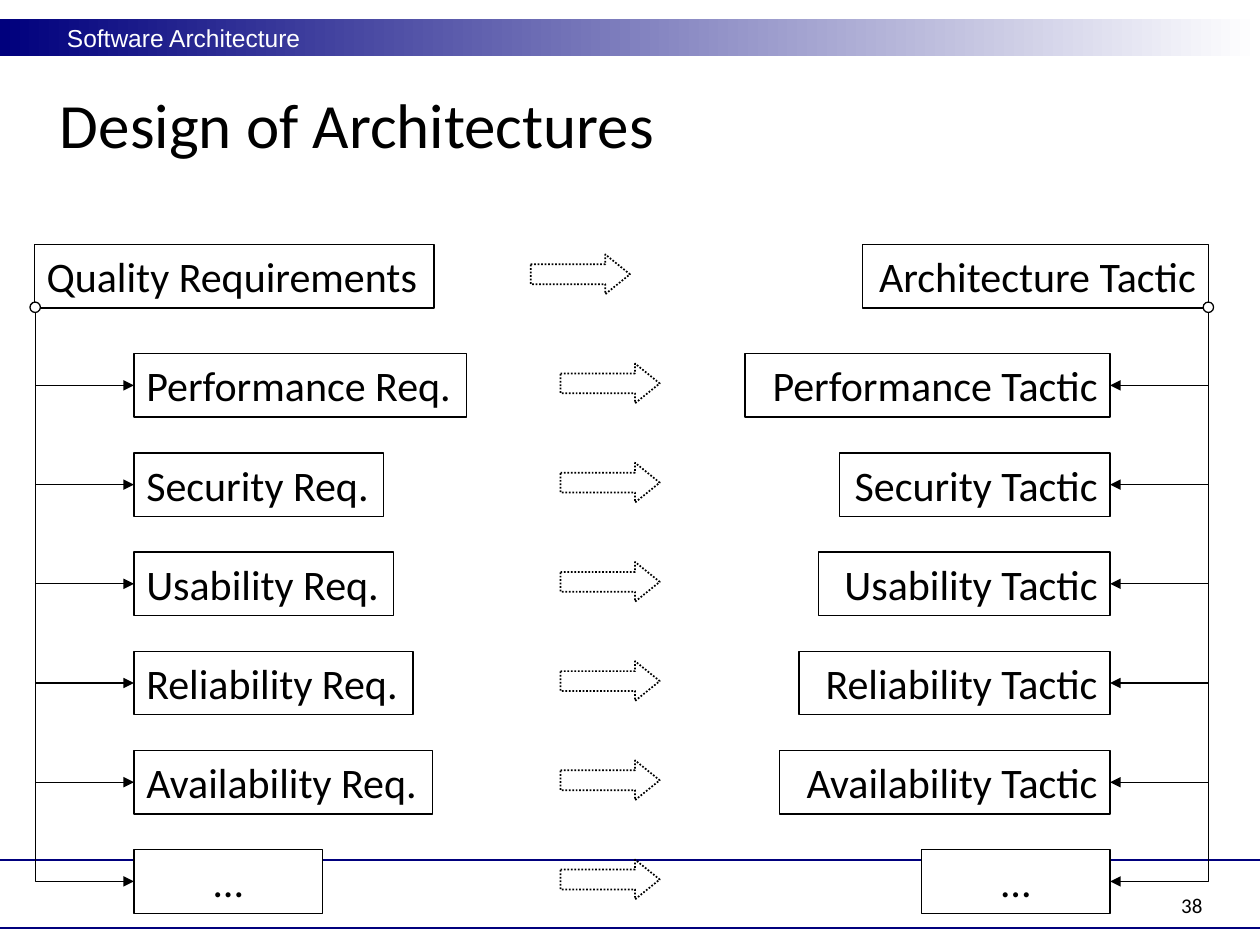
from dataclasses import dataclass

from lxml.etree import SubElement
from pptx import Presentation
from pptx.dml.color import RGBColor
from pptx.enum.dml import MSO_LINE
from pptx.enum.shapes import MSO_CONNECTOR, MSO_SHAPE
from pptx.enum.text import MSO_ANCHOR, PP_ALIGN
from pptx.oxml.ns import qn
from pptx.util import Cm, Pt


@dataclass(frozen=True)
class Theme:
    navy: RGBColor = RGBColor(0x00, 0x00, 0x7D)
    white: RGBColor = RGBColor(0xFF, 0xFF, 0xFF)
    black: RGBColor = RGBColor(0x00, 0x00, 0x00)
    banner_font: str = "Arial"
    body_font: str = "Calibri"
    title_size: int = 36
    box_size: int = 24
    banner_size: int = 14
    number_size: int = 12
    thin_line: float = 0.75
    dotted_line: float = 1
    rule_line: float = 1.25


THEME = Theme()

BANNER = "Software Architecture"
TITLE = "Design of Architectures"
PAGE_NUMBER = "38"

# Each column: header and items as (text, width in cm).
# "outer" is the edge of the header, "trunk" the line below it,
# "inner" the edge of the item boxes.
COLUMNS = [
    {
        "outer": 0.69, "trunk": 0.71, "inner": 2.7, "align": PP_ALIGN.LEFT,
        "header": ("Quality Requirements", 8.06),
        "items": [
            ("Performance Req.", 6.71), ("Security Req.", 5.03),
            ("Usability Req.", 5.23), ("Reliability Req.", 5.63),
            ("Availability Req.", 6.02), ("…", 3.81),
        ],
    },
    {
        "outer": 24.36, "trunk": 24.36, "inner": 22.38, "align": PP_ALIGN.RIGHT,
        "header": ("Architecture Tactic", 6.97),
        "items": [
            ("Performance Tactic", 7.36), ("Security Tactic", 5.46),
            ("Usability Tactic", 5.88), ("Reliability Tactic", 6.27),
            ("Availability Tactic", 6.66), ("…", 3.8),
        ],
    },
]

SLIDE_WIDTH, SLIDE_HEIGHT = 25.4, 19.05
HEADER_TOP, FIRST_ROW_TOP, ROW_PITCH, BOX_HEIGHT = 4.93, 7.13, 2, 1.28
DOT_TOP, DOT_SIZE = 6.09, 0.21
LONGEST_DROP = 7.47
ARROW_WIDTH, ARROW_HEIGHT = 2, 0.8
HEADER_ARROW_LEFT, ROW_ARROW_LEFT, ARROW_DROP = 10.7, 11.3, 0.2
ROW_COUNT = len(COLUMNS[0]["items"])
ROW_TOPS = [FIRST_ROW_TOP + ROW_PITCH * row for row in range(ROW_COUNT)]


def write(shape, text, size, color=THEME.black, font=THEME.body_font,
          align=PP_ALIGN.LEFT, anchor=MSO_ANCHOR.TOP):
    frame = shape.text_frame
    frame.word_wrap = True
    frame.vertical_anchor = anchor
    paragraph = frame.paragraphs[0]
    paragraph.alignment = align
    run = paragraph.add_run()
    run.text = text
    run.font.name = font
    run.font.size = Pt(size)
    run.font.color.rgb = color


def add_text(slide, left, top, width, height, *args, **options):
    box = slide.shapes.add_textbox(Cm(left), Cm(top), Cm(width), Cm(height))
    write(box, *args, **options)


def add_outlined(slide, kind, left, top, width, height):
    shape = slide.shapes.add_shape(kind, Cm(left), Cm(top), Cm(width), Cm(height))
    shape.shadow.inherit = False
    shape.fill.solid()
    shape.fill.fore_color.rgb = THEME.white
    shape.line.color.rgb = THEME.black
    shape.line.width = Pt(THEME.thin_line)
    return shape


def add_line(slide, start, end, color=THEME.black, width=THEME.thin_line,
             kind=MSO_CONNECTOR.STRAIGHT):
    line = slide.shapes.add_connector(
        kind, *(Cm(value) for value in (*start, *end)))
    line.line.color.rgb = color
    line.line.width = Pt(width)
    SubElement(line._element.spPr, qn("a:effectLst"))
    return line


def add_branch(slide, trunk, inner, middle):
    """Draw an arrow that runs down the trunk, then turns once to a box.

    A one-bend connector starts sideways, so it is turned by a quarter:
    its frame has the drop as width and the reach as height.
    """
    start = max(DOT_TOP + DOT_SIZE, middle - LONGEST_DROP)
    half_drop, half_reach = (middle - start) / 2, abs(inner - trunk) / 2
    center_x, center_y = (trunk + inner) / 2, (start + middle) / 2
    branch = add_line(slide, (center_x - half_drop, center_y - half_reach),
                      (center_x + half_drop, center_y + half_reach),
                      kind=MSO_CONNECTOR.ELBOW)
    properties = branch._element.spPr
    properties.find(qn("a:prstGeom")).set("prst", "bentConnector2")
    frame = properties.find(qn("a:xfrm"))
    if inner > trunk:
        frame.set("rot", str(270 * 60000))
        frame.set("flipH", "1")
    else:
        frame.set("rot", str(90 * 60000))
    SubElement(properties.find(qn("a:ln")), qn("a:tailEnd"), type="triangle")


def add_box(slide, column, item, edge, top):
    """Place a labelled box against the column's left or right edge."""
    text, width = item
    left = edge if column["align"] == PP_ALIGN.LEFT else edge - width
    box = add_outlined(slide, MSO_SHAPE.RECTANGLE, left, top, width, BOX_HEIGHT)
    align = PP_ALIGN.CENTER if text == "…" else column["align"]
    write(box, text, THEME.box_size, align=align)


def add_column(slide, column):
    """Draw a header whose trunk branches with an arrow to every item."""
    trunk, inner = column["trunk"], column["inner"]
    add_box(slide, column, column["header"], column["outer"], HEADER_TOP)
    add_outlined(slide, MSO_SHAPE.OVAL, trunk - DOT_SIZE / 2, DOT_TOP,
                 DOT_SIZE, DOT_SIZE)
    for item, top in zip(column["items"], ROW_TOPS):
        add_box(slide, column, item, inner, top)
        add_branch(slide, trunk, inner, top + BOX_HEIGHT / 2)


def add_dotted_arrow(slide, left, top):
    arrow = add_outlined(slide, MSO_SHAPE.RIGHT_ARROW, left, top,
                         ARROW_WIDTH, ARROW_HEIGHT)
    arrow.adjustments[1] = 0.62
    arrow.fill.background()
    arrow.line.width = Pt(THEME.dotted_line)
    arrow.line.dash_style = MSO_LINE.ROUND_DOT


def add_frame(slide):
    """Draw the banner, footer rules, title and page number."""
    banner = add_outlined(slide, MSO_SHAPE.RECTANGLE, 0, 0.38, SLIDE_WIDTH, 0.75)
    banner.line.fill.background()
    banner.fill.gradient()
    banner.fill.gradient_angle = 0
    for stop, color in zip(banner.fill.gradient_stops, (THEME.navy, THEME.white)):
        stop.color.rgb = color
    for height in (17.33, 18.7):
        add_line(slide, (SLIDE_WIDTH, height), (0, height),
                 THEME.navy, THEME.rule_line)
    add_text(slide, 1.1, 0.33, 23.22, 0.85, BANNER, THEME.banner_size,
             THEME.white, THEME.banner_font)
    add_text(slide, 19.21, 17.78, 5.28, 0.85, PAGE_NUMBER, THEME.number_size,
             align=PP_ALIGN.RIGHT, anchor=MSO_ANCHOR.BOTTOM)
    add_text(slide, 0.96, 1.45, 23.75, 2.08, TITLE, THEME.title_size,
             anchor=MSO_ANCHOR.MIDDLE)


def main():
    presentation = Presentation()
    presentation.slide_width = Cm(SLIDE_WIDTH)
    presentation.slide_height = Cm(SLIDE_HEIGHT)
    slide = presentation.slides.add_slide(presentation.slide_layouts[6])
    add_frame(slide)
    for column in COLUMNS:
        add_column(slide, column)
    add_dotted_arrow(slide, HEADER_ARROW_LEFT, HEADER_TOP + ARROW_DROP)
    for top in ROW_TOPS:
        add_dotted_arrow(slide, ROW_ARROW_LEFT, top + ARROW_DROP)
    presentation.save("out.pptx")


if __name__ == "__main__":
    main()
